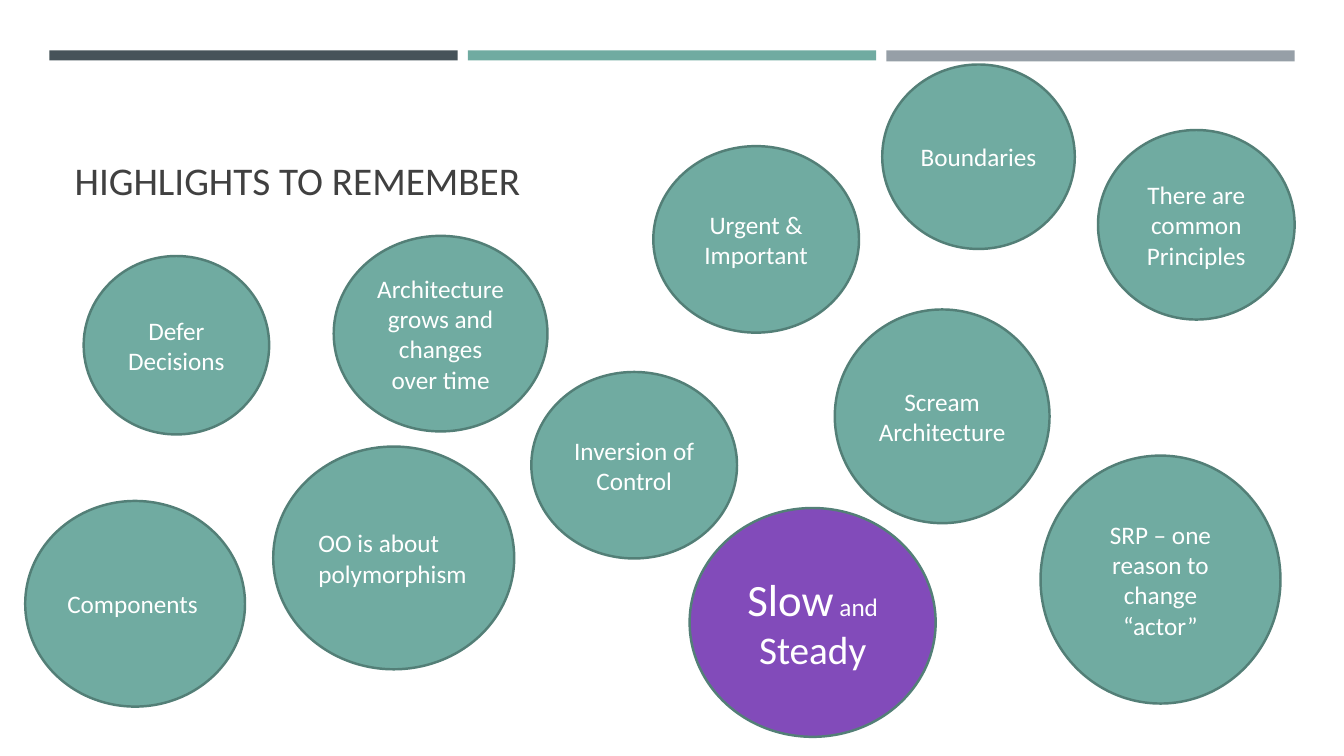
from pptx import Presentation
from pptx.dml.color import RGBColor
from pptx.enum.shapes import MSO_SHAPE as SHAPE
from pptx.enum.text import MSO_ANCHOR as ANCHOR, MSO_AUTO_SIZE as AUTO, PP_ALIGN as ALIGN
from pptx.util import Inches, Pt

FONT = "Calibri"
SLATE = RGBColor(0x46, 0x53, 0x59)
TEAL = RGBColor(0x70, 0xAB, 0xA1)
GREY = RGBColor(0x96, 0x9F, 0xA7)
EDGE = RGBColor(0x53, 0x7F, 0x77)
PURPLE = RGBColor(0x82, 0x4B, 0xBA)
INK = RGBColor(0x40, 0x40, 0x40)
WHITE = RGBColor(0xFF, 0xFF, 0xFF)

# Content
TITLE = "HIGHLIGHTS TO REMEMBER"
BARS = [(SLATE, 0.1), (TEAL, 0.1), (GREY, 0.11)]  # colour, height
C, L = ALIGN.CENTER, ALIGN.LEFT
# Runs of (text, size), (left, top, width, height), fill, alignment
BUBBLES = [
    ([("Architecture grows and changes over time", 18)], (3.31, 2.34, 2.12, 1.94), TEAL, C),
    ([("Boundaries", 18)], (8.75, 0.64, 1.91, 1.83), TEAL, C),
    ([("SRP – one reason to change “actor”", 18)], (10.32, 4.52, 2.38, 2.46), TEAL, C),
    ([("OO is about polymorphism", 18)], (2.71, 4.43, 2.39, 2.21), TEAL, L),
    ([("Inversion of Control", 18)], (5.27, 3.69, 2.04, 1.85), TEAL, C),
    ([("Components", 18)], (0.25, 4.97, 2.18, 2.04), TEAL, L),
    ([("Scream Architecture", 18)], (8.28, 3.07, 2.13, 2.12), TEAL, C),
    ([("Urgent & Important", 18)], (6.48, 1.45, 2.04, 1.85), TEAL, C),
    ([("Slow", 32), (" and ", 18), ("Steady", 28)], (6.84, 5.04, 2.44, 2.27), PURPLE, C),
    ([("Defer Decisions", 18)], (0.83, 2.54, 1.84, 1.77), TEAL, C),
    ([("There are common Principles", 18)], (10.89, 1.29, 1.95, 1.88), TEAL, C),
]
BAR_LEFT, BAR_TOP, BAR_WIDTH, BAR_STEP = 0.49, 0.5, 4.05, 4.15


def add_filled(slide, kind, box, fill):
    s = slide.shapes.add_shape(kind, *map(Inches, box))
    s.shadow.inherit = False
    s.fill.solid()
    s.fill.fore_color.rgb = fill
    s.line.fill.background()
    return s


def add_run(p, text, size, color):
    r = p.add_run()
    r.text = text
    r.font.name = FONT
    r.font.size = Pt(size)
    r.font.color.rgb = color


def add_bubble(slide, runs, box, fill, align):
    s = add_filled(slide, SHAPE.OVAL, box, fill)
    s.line.color.rgb = EDGE
    s.line.width = Pt(1.75)
    tf = s.text_frame
    tf.word_wrap = True
    tf.vertical_anchor = ANCHOR.MIDDLE
    p = tf.paragraphs[0]
    p.alignment = align
    for text, size in runs:
        add_run(p, text, size, WHITE)


def main():
    prs = Presentation()
    prs.slide_width, prs.slide_height = Inches(13.33), Inches(7.5)
    slide = prs.slides.add_slide(prs.slide_layouts[5])

    # Title
    title = slide.shapes.title
    title.left, title.top, title.width, title.height = map(Inches, (0.64, 0.77, 12.06, 1.3))
    tf = title.text_frame
    tf.auto_size = AUTO.NONE
    tf.vertical_anchor = ANCHOR.BOTTOM
    tf.paragraphs[0].alignment = L
    add_run(tf.paragraphs[0], TITLE, 28, INK)

    # Bars across the top
    for i, (color, height) in enumerate(BARS):
        box = (BAR_LEFT + i * BAR_STEP, BAR_TOP, BAR_WIDTH, height)
        add_filled(slide, SHAPE.RECTANGLE, box, color)

    # Bubbles
    for bubble in BUBBLES:
        add_bubble(slide, *bubble)

    prs.save("out.pptx")


if __name__ == "__main__":
    main()
